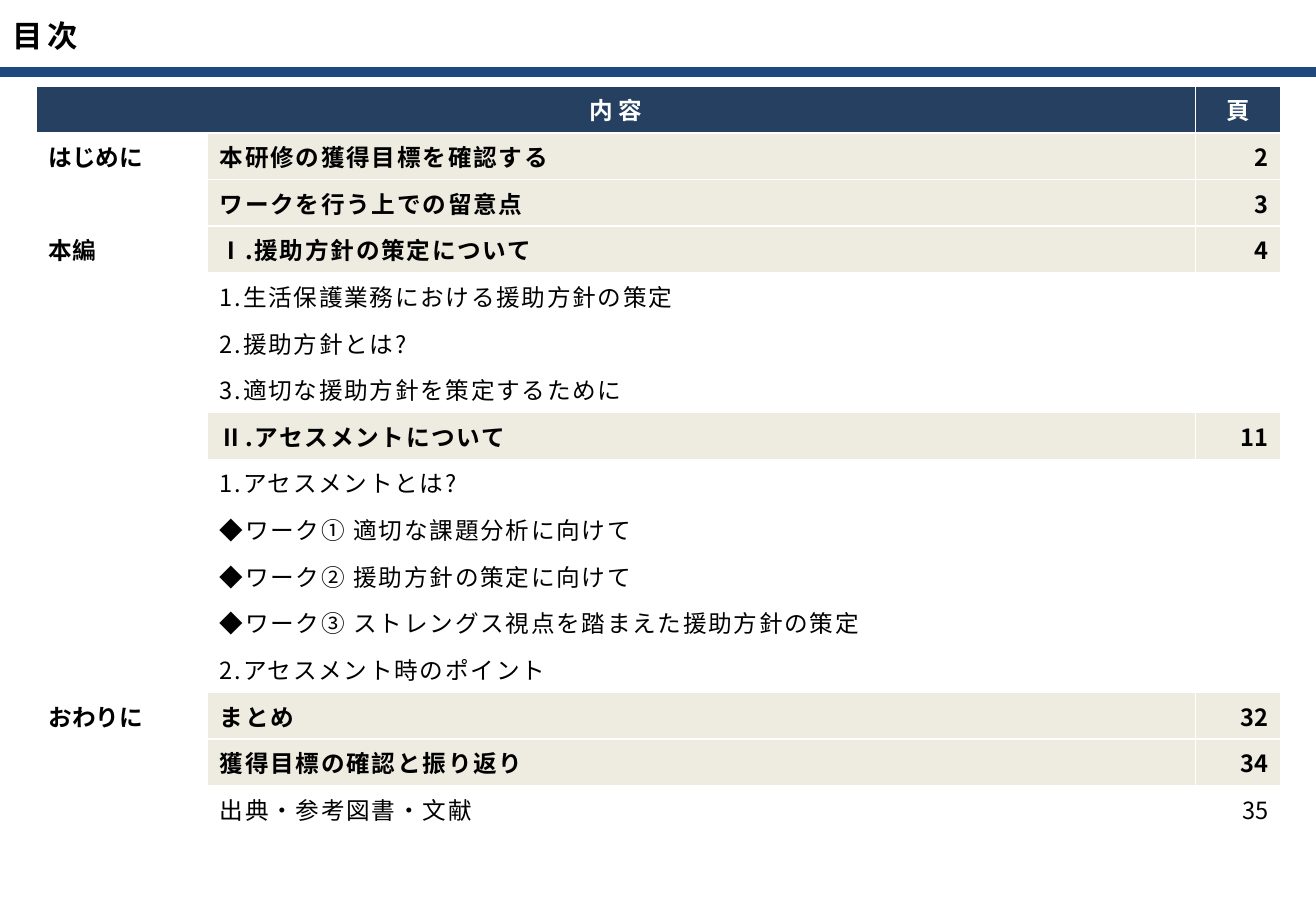
"""Build the table of contents slide of a training deck."""
import pptx
import pptx.util
import pptx.dml.color
import pptx.enum.shapes
import pptx.enum.text
import pptx.oxml.ns
import lxml.etree

Inches, Pt = pptx.util.Inches, pptx.util.Pt
RGB = pptx.dml.color.RGBColor
ALIGN = pptx.enum.text.PP_ALIGN
MIDDLE = pptx.enum.text.MSO_ANCHOR.MIDDLE
qn = pptx.oxml.ns.qn

FONT = "Noto Sans CJK JP"
BLACK, WHITE = RGB(0, 0, 0), RGB(255, 255, 255)
BLUE, NAVY, CREAM = RGB(0x1F, 0x49, 0x7D), RGB(0x25, 0x40, 0x61), RGB(0xEE, 0xEC, 0xE1)


def write(frame, text, size=14, color=BLACK, bold=True, align=ALIGN.LEFT, gap=0):
    para = frame.paragraphs[0]
    para.alignment = align
    if not text:
        lxml.etree.SubElement(para._p, qn("a:endParaRPr"), sz=str(size * 100))
        return
    run = para.add_run()
    run.text = text
    font = run.font
    font.name, font.size, font.bold = FONT, Pt(size), bold
    font.color.rgb = color
    props = run._r.get_or_add_rPr()
    props.set("spc", str(gap * 100))
    lxml.etree.SubElement(props, qn("a:ea"), typeface=FONT)


deck = pptx.Presentation()
deck.slide_width, deck.slide_height = Inches(10.83), Inches(7.5)
slide = deck.slides.add_slide(deck.slide_layouts[5])

line = slide.shapes.add_connector(
    pptx.enum.shapes.MSO_CONNECTOR.STRAIGHT, 0, Inches(0.59), Inches(10.83), Inches(0.59))
line.line.color.rgb, line.line.width = BLUE, Pt(6)
lxml.etree.SubElement(line._element.spPr, qn("a:effectLst"))

title = slide.shapes.title
title.left, title.top, title.width, title.height = 0, 0, Inches(10.83), Inches(0.59)
title.text_frame.vertical_anchor = MIDDLE
write(title.text_frame, "目次", size=18, gap=3)

items = [
    ("はじめに", "本研修の獲得目標を確認する", "2", True),
    ("", "ワークを行う上での留意点", "3", True),
    ("本編", "Ⅰ.援助方針の策定について", "4", True),
    ("", "1.生活保護業務における援助方針の策定", "", False),
    ("", "2.援助方針とは?", "", False),
    ("", "3.適切な援助方針を策定するために", "", False),
    ("", "Ⅱ.アセスメントについて", "11", True),
    ("", "1.アセスメントとは?", "", False),
    ("", "◆ワーク① 適切な課題分析に向けて", "", False),
    ("", "◆ワーク② 援助方針の策定に向けて", "", False),
    ("", "◆ワーク③ ストレングス視点を踏まえた援助方針の策定", "", False),
    ("", "2.アセスメント時のポイント", "", False),
    ("おわりに", "まとめ", "32", True),
    ("", "獲得目標の確認と振り返り", "34", True),
    ("", "出典・参考図書・文献", "35", False),
]
count = len(items) + 1
table = slide.shapes.add_table(
    count, 3, Inches(0.3), Inches(0.71), Inches(10.24), Inches(0.38) * count).table
table.first_row = table.horz_banding = False
for col, width in zip(table.columns, (1.41, 8.13, 0.7)):
    col.width = Inches(width)

for cell in table.iter_cells():
    cell.vertical_anchor = MIDDLE
    cell.fill.background()

table.cell(0, 0).merge(table.cell(0, 1))
for col, text in ((0, "内 容"), (2, "頁")):
    cell = table.cell(0, col)
    cell.fill.solid()
    cell.fill.fore_color.rgb = NAVY
    write(cell.text_frame, text, color=WHITE, align=ALIGN.CENTER)

for row, (part, topic, page, main) in enumerate(items, 1):
    left, mid, right = table.rows[row].cells
    write(left.text_frame, part)
    write(mid.text_frame, topic, bold=main, gap=1)
    write(right.text_frame, page, bold=main, align=ALIGN.RIGHT)
    if main:
        for cell in (mid, right):
            cell.fill.solid()
            cell.fill.fore_color.rgb = CREAM

deck.save("out.pptx")
